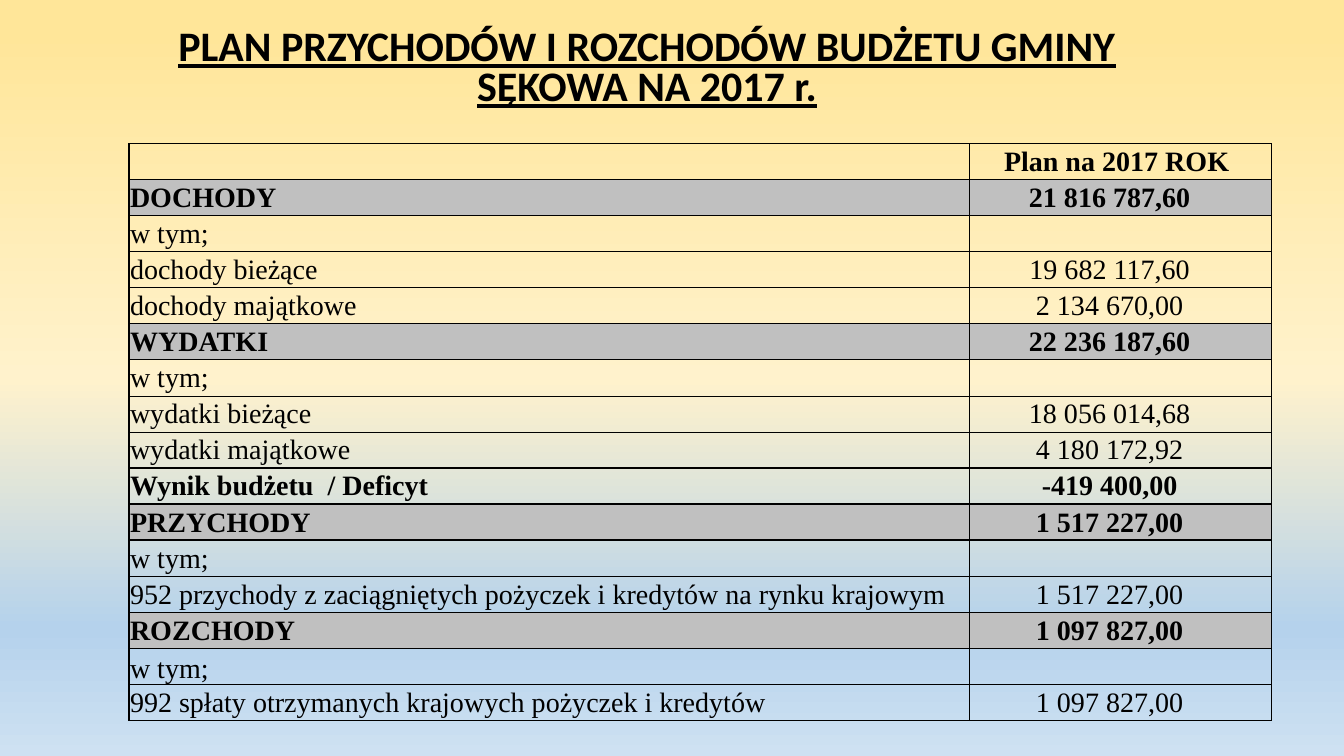
from lxml import etree
from pptx import Presentation, util as u
from pptx.dml.color import RGBColor
from pptx.enum import text
from pptx.oxml.ns import qn

BLACK, GREY = "000000", "C0C0C0"
BACKGROUND = [(4, "FFE699"), (50, "FFF2CC"), (83, "B5D2EC"), (100, "CEE1F2")]
TITLE = "PLAN PRZYCHODÓW I ROZCHODÓW BUDŻETU GMINY SĘKOWA NA 2017 r."

# Row kinds: "head" and "result" are bold, "section" is bold on grey, "item" is plain.
BUDGET = [
    ("head", "", "Plan na 2017 ROK"),
    ("section", "DOCHODY", "21 816 787,60"),
    ("item", "w tym;", ""),
    ("item", "dochody bieżące", "19 682 117,60"),
    ("item", "dochody majątkowe", "2 134 670,00"),
    ("section", "WYDATKI", "22 236 187,60"),
    ("item", "w tym;", ""),
    ("item", "wydatki bieżące", "18 056 014,68"),
    ("item", "wydatki majątkowe", "4 180 172,92"),
    ("result", "Wynik budżetu  / Deficyt", "-419 400,00"),
    ("section", "PRZYCHODY", "1 517 227,00"),
    ("item", "w tym;", ""),
    ("item", "952 przychody z zaciągniętych pożyczek i kredytów na rynku krajowym",
     "1 517 227,00"),
    ("section", "ROZCHODY", "1 097 827,00"),
    ("item", "w tym;", ""),
    ("item", "992 spłaty otrzymanych krajowych pożyczek i kredytów", "1 097 827,00"),
]


def color(value):
    return RGBColor.from_string(value)


class BudgetSlide:
    """Holds the fonts and the slide; positions are shares of the slide's size."""
    title_font, table_font = "Calibri", "Times New Roman"

    def __init__(self, presentation):
        self.width, self.height = presentation.slide_width, presentation.slide_height
        self.slide = presentation.slides.add_slide(presentation.slide_layouts[5])

    def across(self, share):
        return round(self.width * share)

    def down(self, share):
        return round(self.height * share)

    def background(self, stops):
        fill = self.slide.background.fill
        fill.gradient()
        fill.gradient_angle = 270
        stop_list = self.slide.element.xpath(".//p:bg//a:gsLst")[0]
        for old_stop in list(stop_list):
            stop_list.remove(old_stop)
        for percent, value in stops:
            stop = etree.SubElement(stop_list, qn("a:gs"), pos=str(percent * 1000))
            etree.SubElement(stop, qn("a:srgbClr"), val=value)

    def run(self, paragraph, words, font, size, bold):
        run = paragraph.add_run()
        run.text = words
        run.font.name, run.font.size, run.font.bold = font, u.Pt(size), bold
        run.font.color.rgb = color(BLACK)
        return run

    def title(self, words, left, top, width, height):
        shape = self.slide.shapes.title
        shape.left, shape.top = self.across(left), self.down(top)
        shape.width, shape.height = self.across(width), self.down(height)
        frame = shape.text_frame
        frame.word_wrap, frame.auto_size = True, text.MSO_AUTO_SIZE.NONE
        frame.vertical_anchor = text.MSO_ANCHOR.TOP
        paragraph = frame.paragraphs[0]
        paragraph.alignment = text.PP_ALIGN.CENTER
        paragraph.line_spacing, paragraph.space_before = 0.8, u.Pt(10)
        self.run(paragraph, words, self.title_font, 30, True).font.underline = True

    def borders(self, cell, widths):
        """Draw the left, right, top and bottom lines, widths in points."""
        properties = cell._tc.get_or_add_tcPr()
        for side, width in zip("LRTB", widths):
            line = etree.SubElement(properties, qn(f"a:ln{side}"), w=str(u.Pt(width)))
            fill = etree.SubElement(line, qn("a:solidFill"))
            etree.SubElement(fill, qn("a:srgbClr"), val=BLACK)

    def cell(self, cell, words, kind, amount, line_widths):
        self.borders(cell, line_widths)
        if kind == "section":
            cell.fill.solid()
            cell.fill.fore_color.rgb = color(GREY)
        else:
            cell.fill.background()
        cell.margin_left = cell.margin_right = cell.margin_top = u.Inches(0.01)
        cell.margin_bottom = 0
        cell.vertical_anchor = text.MSO_ANCHOR.MIDDLE
        paragraph = cell.text_frame.paragraphs[0]
        if amount:
            paragraph.alignment = text.PP_ALIGN.CENTER
            cell.margin_right = u.Inches(0.08 if kind == "head" else 0.22)
        if words:
            self.run(paragraph, words, self.table_font, 20, kind != "item")

    def table(self, rows, left, top, column_shares, height):
        table = self.slide.shapes.add_table(
            len(rows), len(column_shares), self.across(left), self.down(top),
            self.across(sum(column_shares)), self.down(height)).table
        table.first_row = table.horz_banding = False
        for column, share in zip(table.columns, column_shares):
            column.width = self.across(share)
        kinds = [row[0] for row in rows]
        # Lines between two plain rows are thin, all other row lines are thick.
        inner = [0.5 if pair == ("item", "item") else 1 for pair in zip(kinds, kinds[1:])]
        row_lines = [1, *inner, 1]
        for index, (kind, label, amount) in enumerate(rows):
            above_below = row_lines[index:index + 2]
            self.cell(table.cell(index, 0), label, kind, False, [1, 0.5, *above_below])
            self.cell(table.cell(index, 1), amount, kind, True, [0.5, 1, *above_below])
        table.cell(len(rows) - 2, 0).vertical_anchor = text.MSO_ANCHOR.BOTTOM


def main():
    presentation = Presentation()
    presentation.slide_width, presentation.slide_height = u.Inches(13.33), u.Inches(7.5)
    budget = BudgetSlide(presentation)
    budget.background(BACKGROUND)
    budget.title(TITLE, 0.069, 0.032, 0.825, 0.127)
    budget.table(BUDGET, 0.096, 0.19, (0.625, 0.225), 0.763)
    presentation.save("out.pptx")


if __name__ == "__main__":
    main()
